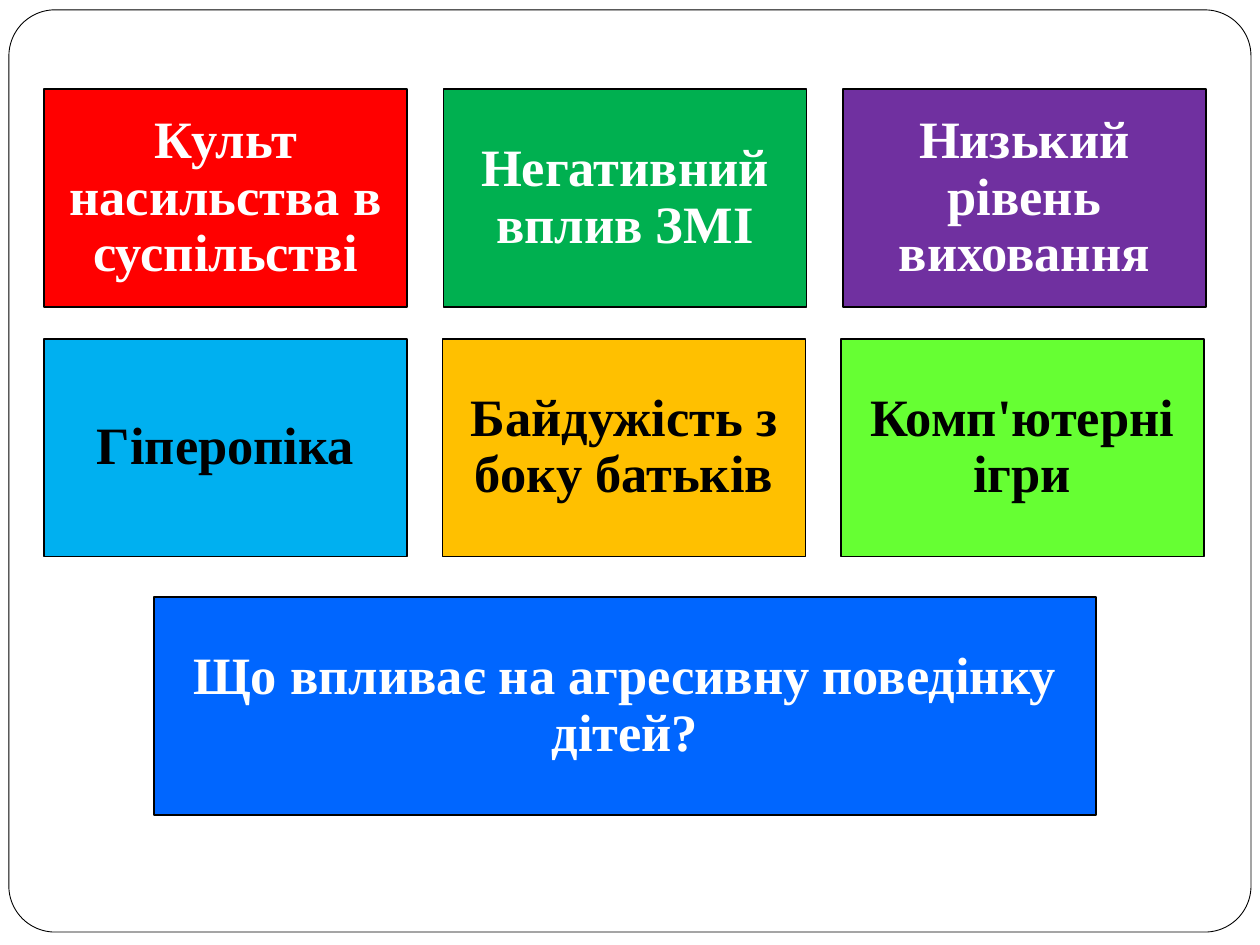
"""Build a slide of coloured boxes naming what drives aggressive behaviour in children."""
from pptx import Presentation
from pptx.dml.color import RGBColor
from pptx.enum.shapes import MSO_SHAPE
from pptx.enum.text import MSO_ANCHOR, MSO_AUTO_SIZE, PP_ALIGN
from pptx.util import Cm, Pt

WHITE = RGBColor(0xFF, 0xFF, 0xFF)
BLACK = RGBColor(0x00, 0x00, 0x00)
RED = RGBColor(0xFF, 0x00, 0x00)
GREEN = RGBColor(0x00, 0xB0, 0x50)
PURPLE = RGBColor(0x70, 0x30, 0xA0)
SKY_BLUE = RGBColor(0x00, 0xB0, 0xF0)
AMBER = RGBColor(0xFF, 0xC0, 0x00)
LIME = RGBColor(0x66, 0xFF, 0x33)
BLUE = RGBColor(0x00, 0x66, 0xFF)

BOX_LEFT, BOX_WIDTH, BOX_HEIGHT = 0.89, 7.32, 4.39


def paint(shape, fill_color, line_width):
    shape.fill.solid()
    shape.fill.fore_color.rgb = fill_color
    shape.line.color.rgb = BLACK
    shape.line.width = Pt(line_width)


def write_label(shape, text, color):
    frame = shape.text_frame
    frame.word_wrap = True
    frame.auto_size = MSO_AUTO_SIZE.NONE
    frame.vertical_anchor = MSO_ANCHOR.MIDDLE
    frame.margin_left = frame.margin_right = Cm(0.3)
    frame.margin_top = frame.margin_bottom = Cm(0.3)
    paragraph = frame.paragraphs[0]
    paragraph.alignment = PP_ALIGN.CENTER
    paragraph.line_spacing = 0.9
    run = paragraph.add_run()
    run.text = text
    run.font.name = "Times New Roman"
    run.font.size = Pt(30)
    run.font.bold = True
    run.font.color.rgb = color


presentation = Presentation()
presentation.slide_width = Cm(25.4)
presentation.slide_height = Cm(19.05)
slide = presentation.slides.add_slide(presentation.slide_layouts[5])

border = slide.shapes.add_shape(
    MSO_SHAPE.ROUNDED_RECTANGLE, Cm(0.18), Cm(0.2), Cm(25.04), Cm(18.59)
)
border.adjustments[0] = 0.05
border.shadow.inherit = False
paint(border, WHITE, 0.5)

rows = [
    (1.8, 8.05, WHITE, [
        ("Культ насильства в суспільстві", RED),
        ("Негативний вплив ЗМІ", GREEN),
        ("Низький рівень виховання", PURPLE),
    ]),
    (6.83, 8.03, BLACK, [
        ("Гіперопіка", SKY_BLUE),
        ("Байдужість з боку батьків", AMBER),
        ("Комп'ютерні ігри", LIME),
    ]),
]
for top, column_step, text_color, causes in rows:
    for column, (text, fill_color) in enumerate(causes):
        box = slide.shapes.add_shape(
            MSO_SHAPE.RECTANGLE,
            Cm(BOX_LEFT + column * column_step), Cm(top),
            Cm(BOX_WIDTH), Cm(BOX_HEIGHT),
        )
        box.shadow.inherit = False
        paint(box, fill_color, 1)
        write_label(box, text, text_color)

question = slide.shapes.title
question.left, question.top = Cm(3.1), Cm(12.04)
question.width, question.height = Cm(19), Cm(BOX_HEIGHT)
paint(question, BLUE, 1)
write_label(question, "Що впливає на агресивну поведінку дітей?", WHITE)
question.element.getparent().append(question.element)

presentation.save("out.pptx")
